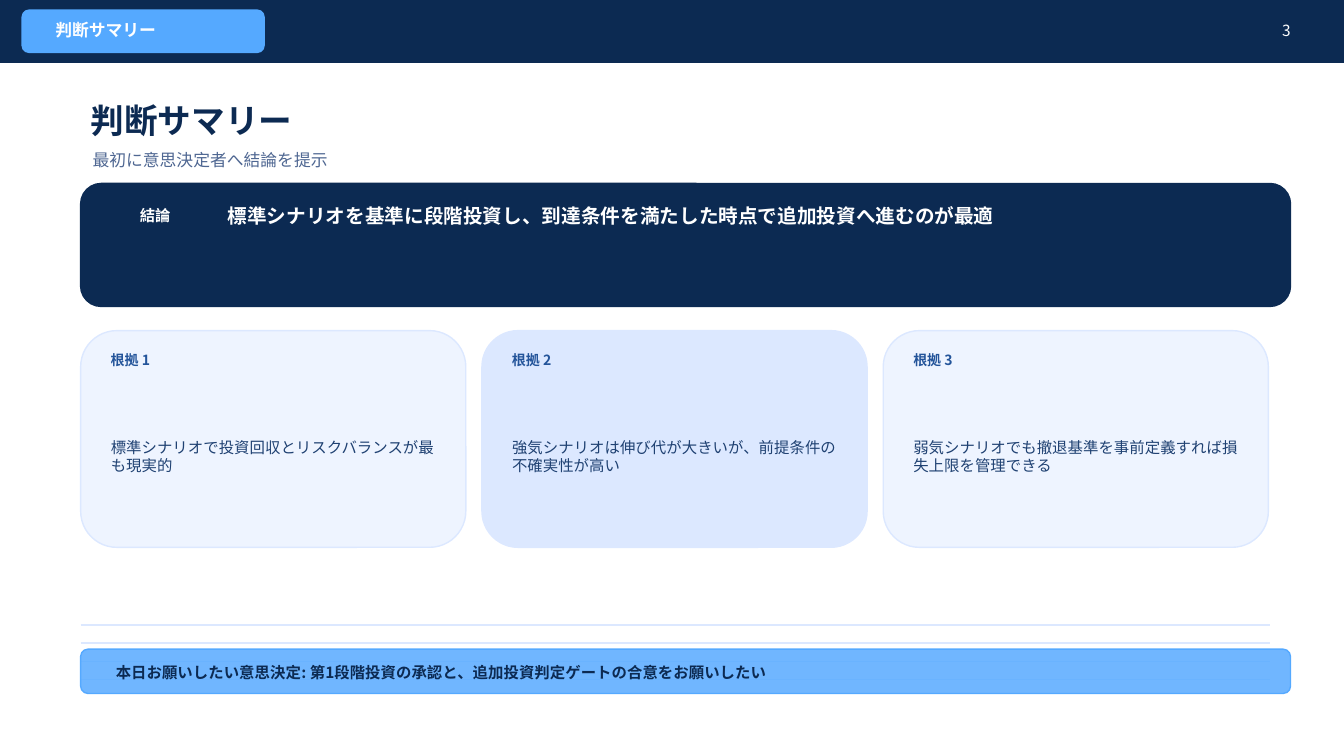
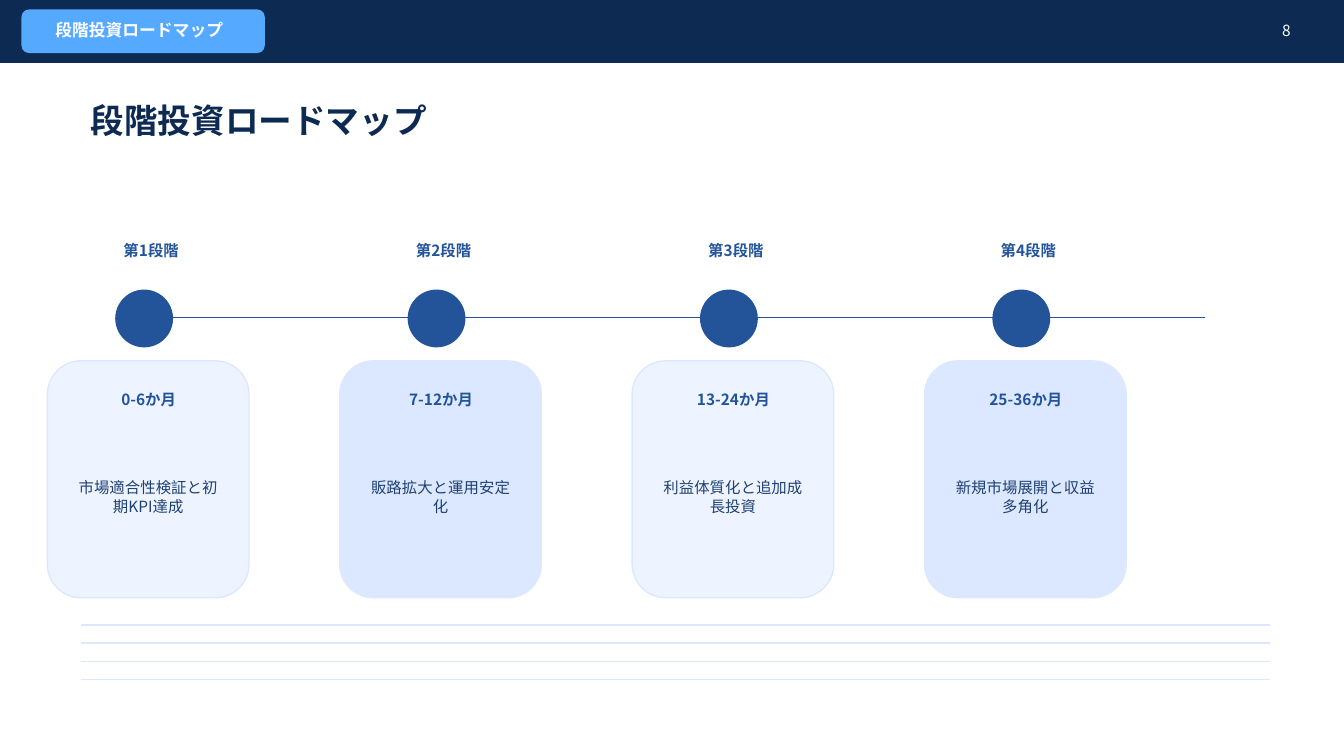
from lxml.etree import SubElement
from pptx import Presentation
from pptx.dml.color import RGBColor
from pptx.enum.shapes import MSO_CONNECTOR, MSO_SHAPE
from pptx.enum.text import MSO_ANCHOR as Anchor, MSO_AUTO_SIZE as AutoSize, PP_ALIGN as Align
from pptx.oxml.ns import qn
from pptx.util import Inches, Pt

NAVY = RGBColor(0x0C, 0x2A, 0x52)
BLUE = RGBColor(0x23, 0x54, 0x9A)
SKY = RGBColor(0x55, 0xA9, 0xFF)
PALE = RGBColor(0xEE, 0xF4, 0xFF)
MIST = RGBColor(0xDC, 0xE8, 0xFF)
INK = RGBColor(0x1F, 0x41, 0x72)
SLATE = RGBColor(0x4F, 0x67, 0x92)
WHITE = RGBColor(0xFF, 0xFF, 0xFF)

BODY_FONT = "Noto Sans CJK JP"
TITLE_FONT = "Arial Narrow"
SLIDE_WIDTH, SLIDE_HEIGHT = 13.33, 7.5
MARGIN = 0.8
PANEL_WIDTH = 12


def place(shape, left, top, width, height):
    shape.left, shape.top = Inches(left), Inches(top)
    shape.width, shape.height = Inches(width), Inches(height)


def write(shape, text, size, color, bold=False, align=Align.LEFT, font=BODY_FONT):
    frame = shape.text_frame
    frame.text = text
    frame.word_wrap = True
    frame.auto_size = AutoSize.NONE
    frame.vertical_anchor = Anchor.MIDDLE
    paragraph = frame.paragraphs[0]
    paragraph.alignment = align
    run = paragraph.runs[0]
    run.font.size = Pt(size)
    run.font.bold = bold
    run.font.color.rgb = color
    run.font.name = font
    SubElement(run.font._element, qn("a:ea"), typeface=BODY_FONT)


def add_text(slide, box, text, size, color, **style):
    shape = slide.shapes.add_textbox(*map(Inches, box))
    write(shape, text, size, color, **style)


def add_panel(slide, box, fill, line=None, kind=MSO_SHAPE.ROUNDED_RECTANGLE):
    shape = slide.shapes.add_shape(kind, *map(Inches, box))
    shape.shadow.inherit = False
    shape.fill.solid()
    shape.fill.fore_color.rgb = fill
    shape.line.color.rgb = line or fill
    shape.line.width = Pt(1)
    return shape


def add_rule(slide, left, right, top, color):
    rule = slide.shapes.add_connector(
        MSO_CONNECTOR.STRAIGHT, Inches(left), Inches(top), Inches(right), Inches(top))
    rule.line.color.rgb = color
    rule.line.width = Pt(1)
    SubElement(rule._element.spPr, qn("a:effectLst"))


def card_fill(index):
    return MIST if index % 2 else PALE


def start_slide(presentation, title, number):
    slide = presentation.slides.add_slide(presentation.slide_layouts[5])
    slide.background.fill.solid()
    slide.background.fill.fore_color.rgb = WHITE
    for row in range(4):
        add_rule(slide, MARGIN, 12.6, 6.2 + 0.18 * row, MIST)
    add_panel(slide, (0, 0, SLIDE_WIDTH, 0.62), NAVY, kind=MSO_SHAPE.RECTANGLE)
    add_panel(slide, (0.22, 0.1, 2.4, 0.42), SKY)
    add_text(slide, (0.45, 0.18, 8.8, 0.24), title, 12, WHITE, bold=True)
    add_text(slide, (12.15, 0.18, 0.75, 0.24), str(number), 11, WHITE, align=Align.RIGHT)
    place(slide.shapes.title, MARGIN, 0.95, 11.4, 0.48)
    write(slide.shapes.title, title, 24, NAVY, bold=True, font=TITLE_FONT)
    return slide


def add_conclusion(slide, left, top, text):
    add_panel(slide, (left, top, PANEL_WIDTH, 1.22), NAVY)
    add_text(slide, (left + 0.24, top + 0.2, 1, 0.24), "結論", 11, WHITE,
             bold=True, align=Align.CENTER)
    add_text(slide, (left + 1.36, top + 0.16, 10.4, 0.32), text, 14, WHITE, bold=True)


def add_reason(slide, left, top, index, text):
    width = 3.82
    add_panel(slide, (left, top, width, 2.15), card_fill(index), MIST)
    add_text(slide, (left + 0.2, top + 0.18, 0.9, 0.22), f"根拠 {index + 1}", 10, BLUE, bold=True)
    add_text(slide, (left + 0.2, top + 0.5, width - 0.4, 1.5), text, 11, INK)


def add_request(slide, left, top, text):
    bar = add_panel(slide, (left, top, PANEL_WIDTH, 0.44), SKY)
    fill_color = bar._element.spPr.find(qn("a:solidFill"))[0]
    SubElement(fill_color, qn("a:alpha"), val="84000")
    add_text(slide, (left + 0.25, top + 0.12, 11.5, 0.22), text, 11, NAVY, bold=True)


def add_stage(slide, left, top, index, period, goal):
    add_panel(slide, (left + 0.68, top + 0.52, 0.56, 0.56), BLUE, kind=MSO_SHAPE.OVAL)
    add_text(slide, (left + 0.58, top, 0.9, 0.24), f"第{index + 1}段階", 11, BLUE,
             bold=True, align=Align.CENTER)
    add_panel(slide, (left, top + 1.22, 2, 2.35), card_fill(index), MIST)
    add_text(slide, (left + 0.23, top + 1.49, 1.55, 0.22), period, 11, BLUE,
             bold=True, align=Align.CENTER)
    add_text(slide, (left + 0.14, top + 1.82, 1.72, 1.5), goal, 11, INK, align=Align.CENTER)


def build_summary(presentation):
    slide = start_slide(presentation, "判断サマリー", 3)
    add_text(slide, (0.82, 1.44, 11.2, 0.3), "最初に意思決定者へ結論を提示", 12, SLATE)
    add_conclusion(slide, MARGIN, 1.82,
                   "標準シナリオを基準に段階投資し、到達条件を満たした時点で追加投資へ進むのが最適")
    reasons = (
        "標準シナリオで投資回収とリスクバランスが最も現実的",
        "強気シナリオは伸び代が大きいが、前提条件の不確実性が高い",
        "弱気シナリオでも撤退基準を事前定義すれば損失上限を管理できる",
    )
    for index, reason in enumerate(reasons):
        add_reason(slide, MARGIN + 3.98 * index, 3.28, index, reason)
    add_request(slide, MARGIN, 6.44,
                "本日お願いしたい意思決定: 第1段階投資の承認と、追加投資判定ゲートの合意をお願いしたい")


def build_roadmap(presentation):
    slide = start_slide(presentation, "段階投資ロードマップ", 8)
    add_rule(slide, 1.35, 11.95, 3.15, BLUE)
    stages = (
        ("0-6か月", "市場適合性検証と初期KPI達成"),
        ("7-12か月", "販路拡大と運用安定化"),
        ("13-24か月", "利益体質化と追加成長投資"),
        ("25-36か月", "新規市場展開と収益多角化"),
    )
    for index, (period, goal) in enumerate(stages):
        add_stage(slide, 0.47 + 2.9 * index, 2.36, index, period, goal)


def main():
    presentation = Presentation()
    presentation.slide_width = Inches(SLIDE_WIDTH)
    presentation.slide_height = Inches(SLIDE_HEIGHT)
    build_summary(presentation)
    build_roadmap(presentation)
    presentation.save("out.pptx")


if __name__ == "__main__":
    main()
